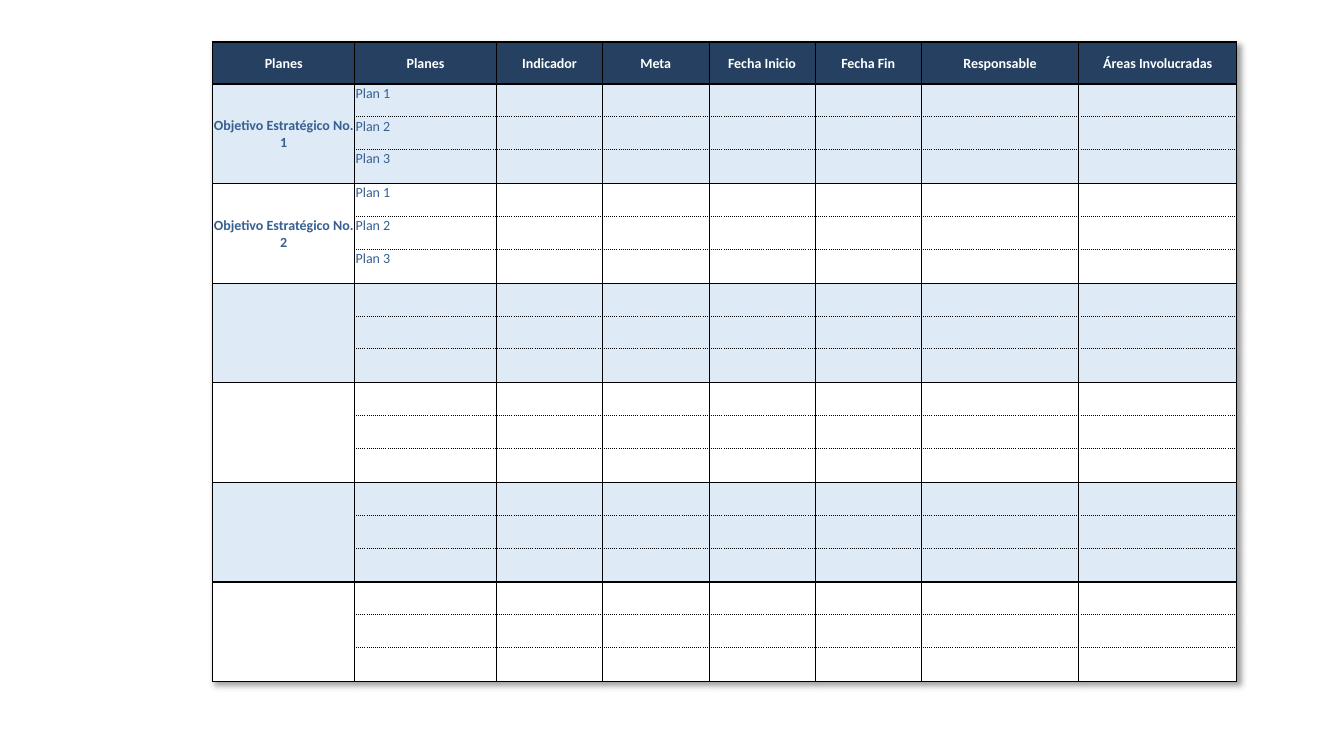
from lxml import etree
from pptx import Presentation
from pptx.dml.color import RGBColor
from pptx.enum.text import MSO_ANCHOR, PP_ALIGN
from pptx.oxml.ns import qn
from pptx.util import Pt

HEADERS = ["Planes", "Planes", "Indicador", "Meta", "Fecha Inicio",
           "Fecha Fin", "Responsable", "Áreas Involucradas"]
OBJECTIVES = [
    ("Objetivo Estratégico No. 1", ["Plan 1", "Plan 2", "Plan 3"]),
    ("Objetivo Estratégico No. 2", ["Plan 1", "Plan 2", "Plan 3"]),
] + [("", ["", "", ""])] * 4

NAVY = RGBColor(0x25, 0x40, 0x61)
BLUE = RGBColor(0x37, 0x60, 0x91)
PALE = RGBColor(0xDE, 0xEB, 0xF7)
WHITE = RGBColor(0xFF, 0xFF, 0xFF)
BLACK = RGBColor(0, 0, 0)

CENTER, LEFT = PP_ALIGN.CENTER, PP_ALIGN.LEFT
MIDDLE, TOP = MSO_ANCHOR.MIDDLE, MSO_ANCHOR.TOP

TABLE_LEFT, TABLE_TOP = 152, 30
COLUMN_WIDTHS = [101.3, 101.3, 75.9, 75.9, 75.9, 75.9, 112.4, 112.9]
HEADER_HEIGHT = 30
PLAN_HEIGHTS = [23.4, 23.4, 24.4]
ROW_HEIGHTS = [HEADER_HEIGHT] + PLAN_HEIGHTS * len(OBJECTIVES)
PLANS = len(PLAN_HEIGHTS)
FONT_SIZE = 10
MARGINS = {"margin_left": Pt(0.75), "margin_right": Pt(0.75),
           "margin_top": Pt(0.75), "margin_bottom": 0}
THICK, THIN = 1, 0.5


def add_border(cell, side, width, dash="solid"):
    line = etree.SubElement(cell._tc.get_or_add_tcPr(), qn(f"a:ln{side}"), w=str(Pt(width)))
    fill = etree.SubElement(line, qn("a:solidFill"))
    etree.SubElement(fill, qn("a:srgbClr"), val=str(BLACK))
    etree.SubElement(line, qn("a:prstDash"), val=dash)


def add_borders(cell, row, column):
    """Thick lines frame the blocks and first column; dotted lines part the plans."""
    for side, edge in (("L", column), ("R", column + 1)):
        add_border(cell, side, THICK if edge in (0, 1, len(HEADERS)) else THIN)
    for side, edge in (("T", row), ("B", row + 1)):
        if column == 0 or edge == 0 or (edge - 1) % PLANS == 0:
            add_border(cell, side, THICK)
        else:
            add_border(cell, side, THIN, "dot")


def write(cell, text, color, bold, align, anchor):
    cell.vertical_anchor = anchor
    paragraph = cell.text_frame.paragraphs[0]
    paragraph.alignment = align
    if text:
        run = paragraph.add_run()
        run.text = text
        for name, value in {"name": "Calibri", "size": Pt(FONT_SIZE), "bold": bold}.items():
            setattr(run.font, name, value)
        run.font.color.rgb = color
    else:
        etree.SubElement(paragraph._p, qn("a:endParaRPr"), sz=str(FONT_SIZE * 100))


def add_shadow(table):
    effects = etree.Element(qn("a:effectLst"))
    shadow = etree.SubElement(effects, qn("a:outerShdw"), blurRad=str(Pt(4)), dist=str(Pt(3)),
                              dir="2700000", algn="tl", rotWithShape="0")
    color = etree.SubElement(shadow, qn("a:srgbClr"), val=str(BLACK))
    etree.SubElement(color, qn("a:alpha"), val="40000")
    table._tbl.tblPr.insert(0, effects)


def main():
    presentation = Presentation()
    presentation.slide_width, presentation.slide_height = Pt(960), Pt(540)
    slide = presentation.slides.add_slide(presentation.slide_layouts[6])
    plan_table = slide.shapes.add_table(
        len(ROW_HEIGHTS), len(HEADERS), Pt(TABLE_LEFT), Pt(TABLE_TOP),
        Pt(sum(COLUMN_WIDTHS)), Pt(sum(ROW_HEIGHTS))).table
    plan_table.horz_banding = False
    add_shadow(plan_table)
    for column, width in zip(plan_table.columns, COLUMN_WIDTHS):
        column.width = Pt(width)
    for row, height in zip(plan_table.rows, ROW_HEIGHTS):
        row.height = Pt(height)

    blanks = [""] * (len(HEADERS) - 2)
    contents = [HEADERS]
    for objective, plans in OBJECTIVES:
        for index, plan in enumerate(plans):
            contents.append([objective if index == 0 else "", plan] + blanks)

    for r, texts in enumerate(contents):
        band = (PALE, WHITE)[(r - 1) // PLANS % 2]
        for c, text in enumerate(texts):
            cell = plan_table.cell(r, c)
            for name, value in MARGINS.items():
                setattr(cell, name, value)
            add_borders(cell, r, c)
            cell.fill.solid()
            cell.fill.fore_color.rgb = NAVY if r == 0 else band
            heading = r == 0 or c == 0
            write(cell, text, WHITE if r == 0 else BLUE, heading,
                  CENTER if heading else LEFT, MIDDLE if heading else TOP)

    for first in range(1, len(contents), PLANS):
        plan_table.cell(first, 0).merge(plan_table.cell(first + PLANS - 1, 0))
    presentation.save("out.pptx")


if __name__ == "__main__":
    main()
